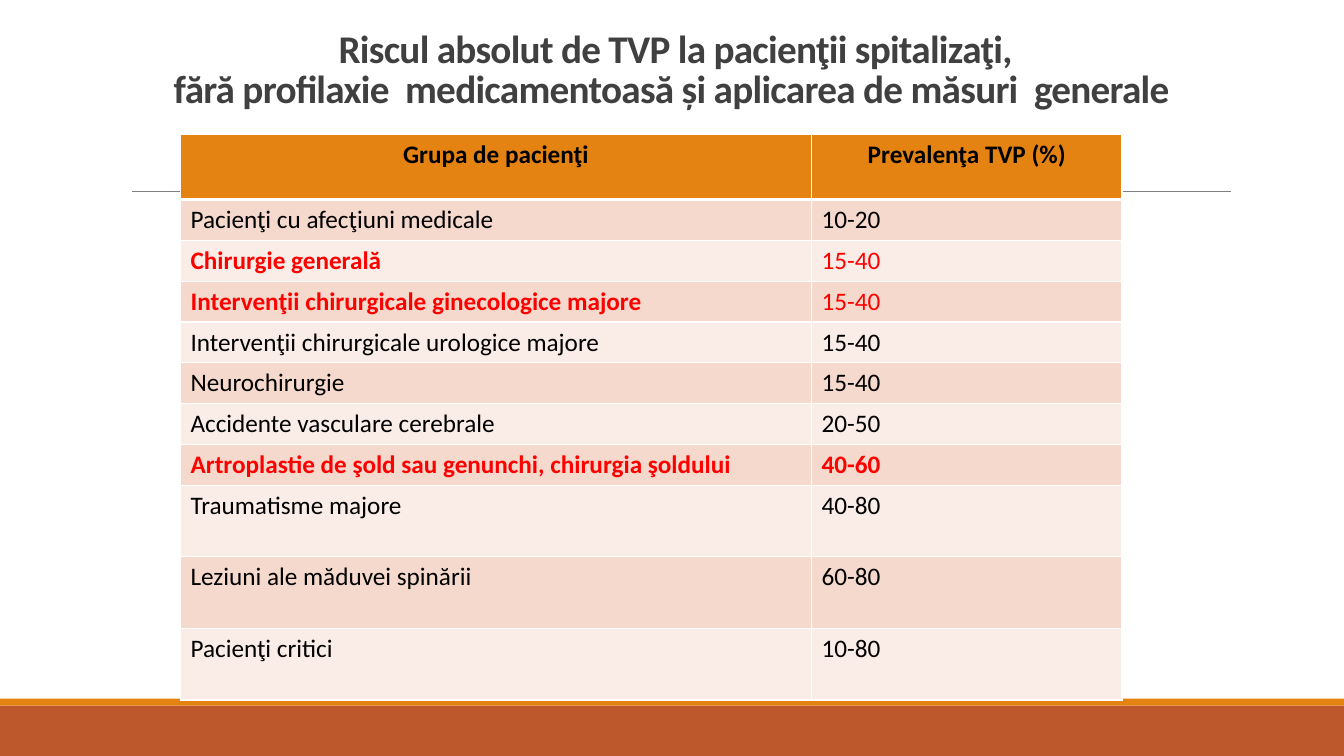
import pptx
import pptx.dml.color
import pptx.enum.shapes
import pptx.enum.text
import pptx.oxml.ns
import pptx.util
from lxml import etree

RGBColor = pptx.dml.color.RGBColor
WHITE = RGBColor(0xFF, 0xFF, 0xFF)
BLACK = RGBColor(0x00, 0x00, 0x00)
RED = RGBColor(0xFF, 0x00, 0x00)
CHARCOAL = RGBColor(0x40, 0x40, 0x40)
GRAY = RGBColor(0x80, 0x80, 0x80)
ORANGE = RGBColor(0xE4, 0x83, 0x12)
RUST = RGBColor(0xBD, 0x58, 0x2C)
PEACH = RGBColor(0xF5, 0xD9, 0xCC)
PALE = RGBColor(0xFA, 0xED, 0xE7)

TITLE = (
    "Riscul absolut de TVP la pacienţii spitalizaţi,",
    "fără profilaxie  medicamentoasă și aplicarea de măsuri  generale ",
)
HEADINGS = ("Grupa de pacienţi", "Prevalenţa TVP (%)")
PLAIN, ACCENT, ACCENT_BOLD = (BLACK, False), (RED, False), (RED, True)
SHORT, TALL = 5.4, 9.47
RISKS = (
    ("Pacienţi cu afecţiuni medicale", "10-20", PLAIN, PLAIN, SHORT),
    ("Chirurgie generală", "15-40", ACCENT_BOLD, ACCENT, SHORT),
    ("Intervenţii chirurgicale ginecologice majore", "15-40", ACCENT_BOLD, ACCENT, SHORT),
    ("Intervenţii chirurgicale urologice majore", "15-40", PLAIN, PLAIN, SHORT),
    ("Neurochirurgie", "15-40", PLAIN, PLAIN, SHORT),
    ("Accidente vasculare cerebrale", "20-50", PLAIN, PLAIN, SHORT),
    ("Artroplastie de şold sau genunchi, chirurgia şoldului", "40-60", ACCENT_BOLD, ACCENT_BOLD, SHORT),
    ("Traumatisme majore", "40-80", PLAIN, PLAIN, TALL),
    ("Leziuni ale măduvei spinării", "60-80", PLAIN, PLAIN, TALL),
    ("Pacienţi critici", "10-80", PLAIN, PLAIN, TALL),
)


class RiskSlide:
    font = "Calibri"
    title_size = 28
    body_size = 18

    def __init__(self, deck):
        self.width, self.height = deck.slide_width, deck.slide_height
        self.slide = deck.slides.add_slide(deck.slide_layouts[6])

    def x(self, percent):
        return round(self.width * percent / 100)

    def y(self, percent):
        return round(self.height * percent / 100)

    def box(self, left, top, width, height):
        return self.x(left), self.y(top), self.x(width), self.y(height)

    def band(self, top, height, color):
        band = self.slide.shapes.add_shape(
            pptx.enum.shapes.MSO_SHAPE.RECTANGLE, *self.box(0, top, 100, height))
        band.shadow.inherit = False
        band.fill.solid()
        band.fill.fore_color.rgb = color
        band.line.fill.background()

    def rule(self, left, right, top):
        rule = self.slide.shapes.add_connector(
            pptx.enum.shapes.MSO_CONNECTOR.STRAIGHT,
            self.x(left), self.y(top), self.x(right), self.y(top))
        rule.line.color.rgb = GRAY
        rule.line.width = pptx.util.Pt(0.5)
        etree.SubElement(rule.element.spPr, pptx.oxml.ns.qn("a:effectLst"))

    def run(self, paragraph, text, size, color, bold):
        run = paragraph.add_run()
        run.text = text
        run.font.name = self.font
        run.font.size = pptx.util.Pt(size)
        run.font.bold = bold
        run.font.color.rgb = color
        return run

    def title(self, lines, *place):
        frame = self.slide.shapes.add_textbox(*self.box(*place)).text_frame
        frame.word_wrap = True
        frame.vertical_anchor = pptx.enum.text.MSO_ANCHOR.BOTTOM
        paragraph = frame.paragraphs[0]
        paragraph.alignment = pptx.enum.text.PP_ALIGN.CENTER
        paragraph.line_spacing = 0.85
        for number, line in enumerate(lines):
            if number:
                paragraph.add_line_break()
            run = self.run(paragraph, line, self.title_size, CHARCOAL, True)
            run.font._element.set("spc", "-50")

    def borders(self, cell, top, bottom):
        properties = cell._tc.get_or_add_tcPr()
        for side, points in (("L", 1), ("R", 1), ("T", top), ("B", bottom)):
            edge = etree.SubElement(properties, pptx.oxml.ns.qn(f"a:ln{side}"),
                                    w=str(pptx.util.Pt(points)))
            paint = etree.SubElement(edge, pptx.oxml.ns.qn("a:solidFill"))
            etree.SubElement(paint, pptx.oxml.ns.qn("a:srgbClr"), val=str(WHITE))

    def cell(self, cell, text, style, fill, top=1, bottom=1, align=None):
        self.borders(cell, top, bottom)
        cell.fill.solid()
        cell.fill.fore_color.rgb = fill
        paragraph = cell.text_frame.paragraphs[0]
        paragraph.alignment = align
        self.run(paragraph, text, self.body_size, *style)

    def table(self, left, top, columns, header_height, headings, risks):
        heights = [header_height] + [risk[-1] for risk in risks]
        table = self.slide.shapes.add_table(
            len(heights), len(columns),
            *self.box(left, top, sum(columns), sum(heights))).table
        for column, width in zip(table.columns, columns):
            column.width = self.x(width)
        for row, height in zip(table.rows, heights):
            row.height = self.y(height)
        for column, heading in enumerate(headings):
            self.cell(table.cell(0, column), heading, (BLACK, True), ORANGE,
                      bottom=3, align=pptx.enum.text.PP_ALIGN.CENTER)
        for row, (group, rate, group_style, rate_style, _) in enumerate(risks, 1):
            fill = PEACH if row % 2 else PALE
            top_edge = 3 if row == 1 else 1
            self.cell(table.cell(row, 0), group, group_style, fill, top_edge)
            self.cell(table.cell(row, 1), rate, rate_style, fill, top_edge)


def main():
    deck = pptx.Presentation()
    deck.slide_width = pptx.util.Inches(13.33)
    deck.slide_height = pptx.util.Inches(7.5)
    page = RiskSlide(deck)
    page.band(93.33, 6.67, RUST)
    page.band(92.4, 0.93, ORANGE)
    page.rule(9.83, 91.6, 25.33)
    page.title(TITLE, 9, 4.13, 82.5, 11.33)
    page.table(13.43, 17.73, (46.95, 23.1), 8.67, HEADINGS, RISKS)
    deck.save("out.pptx")


if __name__ == "__main__":
    main()
